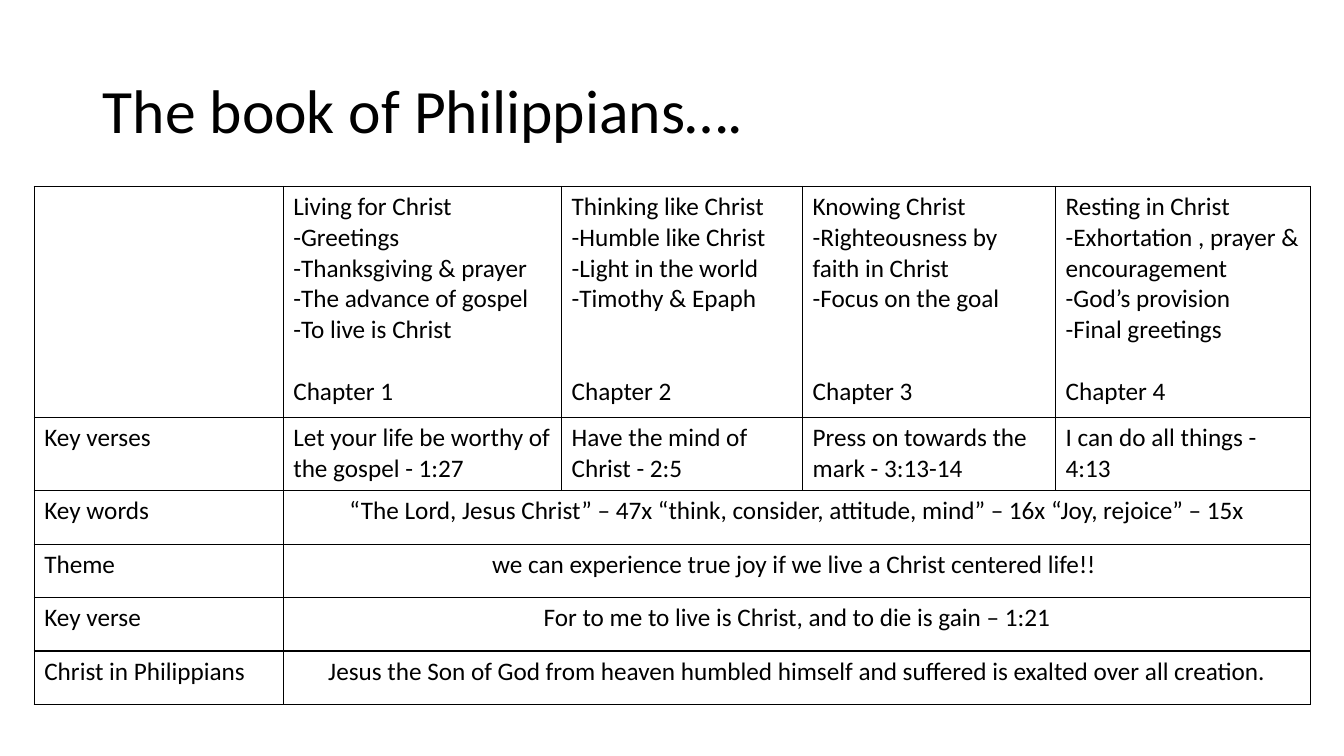
"""Build the overview slide for the book of Philippians."""
from dataclasses import dataclass

from lxml import etree
from pptx import Presentation
from pptx.dml.color import RGBColor
from pptx.enum.text import MSO_ANCHOR, PP_ALIGN
from pptx.oxml.ns import qn
from pptx.util import Inches, Pt

LEFT, CENTER = PP_ALIGN.LEFT, PP_ALIGN.CENTER
TOP, MIDDLE = MSO_ANCHOR.TOP, MSO_ANCHOR.MIDDLE

COLORS = {"text": "000000", "border": "000000", "page": "FFFFFF"}
FONT = "Calibri"
TITLE_SIZE, BODY_SIZE = 44, 18
LINE_HEIGHT = 22
CHAPTER_LINE = 6
BORDER_WIDTH = 1

SLIDE_W, SLIDE_H = Inches(13.33), Inches(7.5)
TITLE_BOX = (6.9, 5.33, 86.27, 19.33)
TABLE_LEFT, TABLE_TOP = 2.55, 24.67
COL_SHARES = (18.53, 20.71, 17.93, 18.83, 18.98)
HEAD_SHARE, VERSES_SHARE, SUMMARY_SHARE = 30.53, 9.73, 7.07


@dataclass(frozen=True)
class Chapter:
    lines: tuple[str, ...]
    used_lines: int
    key_verse: str


@dataclass(frozen=True)
class Summary:
    label: str
    text: str


CHAPTERS = (
    Chapter(("Living for Christ", "-Greetings", "-Thanksgiving & prayer",
             "-The advance of gospel", "-To live is Christ"), 5,
            "Let your life be worthy of the gospel - 1:27"),
    Chapter(("Thinking like Christ", "-Humble like Christ",
             "-Light in the world", "-Timothy & Epaph"), 4,
            "Have the mind of Christ - 2:5"),
    Chapter(("Knowing Christ", "-Righteousness by faith in Christ",
             "-Focus on the goal"), 4,
            "Press on towards the mark - 3:13-14"),
    Chapter(("Resting in Christ", "-Exhortation , prayer & encouragement",
             "-God’s provision", "-Final greetings"), 5,
            "I can do all things - 4:13"),
)
SUMMARIES = (
    Summary("Key words", "“The Lord, Jesus Christ” – 47x “think, consider, "
            "attitude, mind” – 16x “Joy, rejoice” – 15x"),
    Summary("Theme", "we can experience true joy if we live a Christ centered life!! "),
    Summary("Key verse", "For to me to live is Christ, and to die is gain – 1:21"),
    Summary("Christ in Philippians", "Jesus the Son of God from heaven humbled "
            "himself and suffered is exalted over all creation."),
)


def across(share: float) -> int:
    return round(SLIDE_W * share / 100)


def down(share: float) -> int:
    return round(SLIDE_H * share / 100)


def add_run(p, text: str, size: int) -> None:
    r = p.add_run()
    r.text = text
    r.font.name = FONT
    r.font.size = Pt(size)
    r.font.bold = False
    r.font.color.rgb = RGBColor.from_string(COLORS["text"])


def write_cell(cell, lines: tuple[str, ...], align=LEFT):
    tf = cell.text_frame
    for i, line in enumerate(lines):
        p = tf.add_paragraph() if i else tf.paragraphs[0]
        p.alignment = align
        add_run(p, line, BODY_SIZE)
    return p


def style_cell(cell) -> None:
    cell.fill.background()
    cell.vertical_anchor = TOP
    tc_pr = cell._tc.get_or_add_tcPr()
    for i, side in enumerate(("a:lnL", "a:lnR", "a:lnT", "a:lnB")):
        ln = etree.Element(qn(side), w=str(Pt(BORDER_WIDTH)))
        fill = etree.SubElement(ln, qn("a:solidFill"))
        etree.SubElement(fill, qn("a:srgbClr"), val=COLORS["border"])
        tc_pr.insert(i, ln)


def add_title(slide) -> None:
    sp = slide.shapes.title
    left, top, width, height = TITLE_BOX
    sp.left, sp.top = across(left), down(top)
    sp.width, sp.height = across(width), down(height)
    tf = sp.text_frame
    tf.word_wrap = True
    tf.vertical_anchor = MIDDLE
    p = tf.paragraphs[0]
    p.alignment = LEFT
    p.line_spacing = 0.9
    add_run(p, "The book of Philippians….", TITLE_SIZE)


def add_overview(slide) -> None:
    row_shares = (HEAD_SHARE, VERSES_SHARE) + (SUMMARY_SHARE,) * len(SUMMARIES)
    table = slide.shapes.add_table(
        len(row_shares), len(COL_SHARES), across(TABLE_LEFT), down(TABLE_TOP),
        across(sum(COL_SHARES)), down(sum(row_shares))).table
    table.first_row = table.horz_banding = False
    for col, share in zip(table.columns, COL_SHARES):
        col.width = across(share)
    for row, share in zip(table.rows, row_shares):
        row.height = down(share)
    for cell in table.iter_cells():
        style_cell(cell)

    write_cell(table.cell(1, 0), ("Key verses",))
    for number, chapter in enumerate(CHAPTERS, 1):
        p = write_cell(table.cell(0, number), chapter.lines + (f"Chapter {number}",))
        p.space_before = Pt(LINE_HEIGHT * (CHAPTER_LINE - chapter.used_lines))
        write_cell(table.cell(1, number), (chapter.key_verse,))
    for row, summary in enumerate(SUMMARIES, 2):
        write_cell(table.cell(row, 0), (summary.label,))
        cell = table.cell(row, 1)
        cell.merge(table.cell(row, len(COL_SHARES) - 1))
        write_cell(cell, (summary.text,), CENTER)


def main() -> None:
    prs = Presentation()
    prs.slide_width, prs.slide_height = SLIDE_W, SLIDE_H
    slide = prs.slides.add_slide(prs.slide_layouts.get_by_name("Title Only"))
    fill = slide.background.fill
    fill.solid()
    fill.fore_color.rgb = RGBColor.from_string(COLORS["page"])
    add_title(slide)
    add_overview(slide)
    prs.save("out.pptx")


if __name__ == "__main__":
    main()
